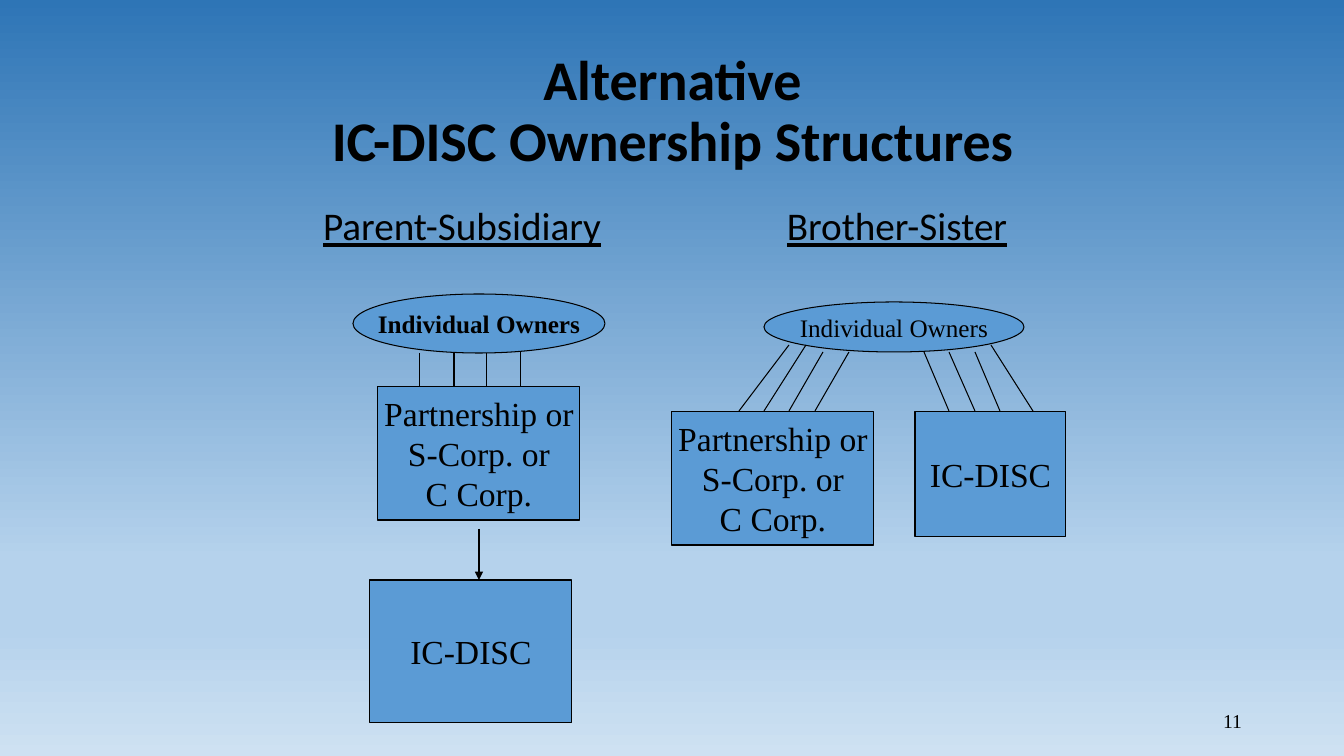
from lxml.etree import SubElement
from pptx import Presentation
from pptx.dml.color import RGBColor
from pptx.enum.shapes import MSO_CONNECTOR as Connector, MSO_SHAPE as Shape
from pptx.enum.text import MSO_ANCHOR as Anchor, PP_ALIGN as Align
from pptx.oxml.ns import qn
from pptx.util import Pt

PX = 914400 / 100.8
BLACK = RGBColor(0x00, 0x00, 0x00)
BLUE = RGBColor(0x5B, 0x9B, 0xD5)
SKY = [
    (0, RGBColor(0x2E, 0x75, 0xB6)),
    (74, RGBColor(0xB5, 0xD2, 0xEC)),
    (83, RGBColor(0xB5, 0xD2, 0xEC)),
    (100, RGBColor(0xCE, 0xE1, 0xF2)),
]
SANS, SERIF = "Calibri", "Times New Roman"
COMPANY = ["Partnership or", "S-Corp. or", "C Corp."]


def px(*lengths):
    """Turn pixel lengths into EMU."""
    return [round(length * PX) for length in lengths]


def paint_background(slide):
    """Fill the slide with the vertical sky gradient."""
    fill = slide.background.fill
    fill.gradient()
    fill.gradient_angle = 270
    stops = next(slide.element.iter(qn("a:gsLst")))
    for old_stop in list(stops):
        stops.remove(old_stop)
    for percent, color in SKY:
        stop = SubElement(stops, qn("a:gs"), pos=str(percent * 1000))
        SubElement(stop, qn("a:srgbClr"), val=str(color))


def add_run(paragraph, text, size, font, bold=False, underline=False):
    """Add one formatted run to a paragraph."""
    run = paragraph.add_run()
    run.text = text
    run.font.size = Pt(size)
    run.font.name = font
    run.font.bold = bold
    run.font.underline = underline
    run.font.color.rgb = BLACK


def add_label(slide, box, align, anchor=Anchor.MIDDLE):
    """Place an empty wrapped text box and return its paragraph."""
    frame = slide.shapes.add_textbox(*px(*box)).text_frame
    frame.word_wrap = True
    frame.vertical_anchor = anchor
    paragraph = frame.paragraphs[0]
    paragraph.alignment = align
    return paragraph


def add_title(slide, box):
    """Write the two-line title."""
    title = add_label(slide, box, Align.CENTER)
    title.line_spacing = 0.9
    add_run(title, "Alternative", 40, SANS, bold=True)
    title.add_line_break()
    add_run(title, "IC-DISC Ownership Structures", 40, SANS, bold=True)


def add_heading(slide, box, text):
    """Write an underlined heading above a structure."""
    heading = add_label(slide, box, Align.CENTER, Anchor.TOP)
    heading.line_spacing = 0.9
    add_run(heading, text, 28, SANS, underline=True)


def add_page_number(slide, box):
    """Write the page number."""
    add_run(add_label(slide, box, Align.RIGHT), "11", 14, SERIF)


def add_entity(slide, origin, box, lines, kind=Shape.RECTANGLE, size=24, bold=False):
    """Draw one owner or company, placed relative to the origin."""
    left, top, width, height = box
    entity = slide.shapes.add_shape(
        kind, *px(origin[0] + left, origin[1] + top, width, height))
    entity.shadow.inherit = False
    entity.fill.solid()
    entity.fill.fore_color.rgb = BLUE
    entity.line.color.rgb = BLACK
    entity.line.width = Pt(0.75)
    frame = entity.text_frame
    frame.word_wrap = False
    frame.vertical_anchor = Anchor.MIDDLE
    for index, line in enumerate(lines):
        paragraph = frame.add_paragraph() if index else frame.paragraphs[0]
        paragraph.alignment = Align.CENTER
        add_run(paragraph, line, size, SERIF, bold)


def add_owners(slide, origin, box, bold=False):
    """Draw the ellipse of individual owners."""
    add_entity(slide, origin, box, ["Individual Owners"], Shape.OVAL, 18, bold)


def add_link(slide, origin, start, end, arrow=False):
    """Draw an ownership line, placed relative to the origin."""
    left, top = origin
    link = slide.shapes.add_connector(
        Connector.STRAIGHT,
        *px(left + start[0], top + start[1], left + end[0], top + end[1]))
    link.line.color.rgb = BLACK
    link.line.width = Pt(0.75)
    if arrow:
        SubElement(link.line._get_or_add_ln(), qn("a:tailEnd"), type="triangle")
    SubElement(link.element.spPr, qn("a:effectLst"))


def add_parent_subsidiary(slide, origin):
    """Draw owners above a company that holds the IC-DISC."""
    add_entity(slide, origin, (25, 92, 202, 134), COMPANY)
    add_entity(slide, origin, (17, 286, 202, 143), ["IC-DISC"])
    add_link(slide, origin, (126, 235), (126, 286), arrow=True)
    for x in (101, 134, 168):
        add_link(slide, origin, (x, 92), (x, 42), arrow=True)
    add_owners(slide, origin, (0, 0, 252, 59), bold=True)
    add_link(slide, origin, (67, 59), (67, 92))


def add_brother_sister(slide, origin):
    """Draw owners holding a company and the IC-DISC side by side."""
    add_entity(slide, origin, (0, 109, 202, 134), COMPANY)
    add_entity(slide, origin, (243, 109, 151, 126), ["IC-DISC"])
    add_owners(slide, origin, (92, 0, 260, 50))
    company_links = [(117, 43, 67), (134, 43, 92), (151, 50, 117), (177, 50, 143)]
    disc_links = [(252, 50, 277), (277, 50, 303), (303, 50, 328), (319, 43, 361)]
    for x, y, end_x in company_links + disc_links:
        add_link(slide, origin, (x, y), (end_x, 109))


def main():
    """Build and save the slide."""
    deck = Presentation()
    deck.slide_width, deck.slide_height = px(1344, 756)
    slide = deck.slides.add_slide(deck.slide_layouts[6])
    paint_background(slide)
    add_page_number(slide, (950, 701, 302, 40))
    add_title(slide, (93, 40, 1159, 146))
    add_heading(slide, (302, 202, 320, 53), "Parent-Subsidiary")
    add_heading(slide, (737, 202, 320, 53), "Brother-Sister")
    add_parent_subsidiary(slide, (353, 294))
    add_brother_sister(slide, (672, 302))
    deck.save("out.pptx")


if __name__ == "__main__":
    main()
